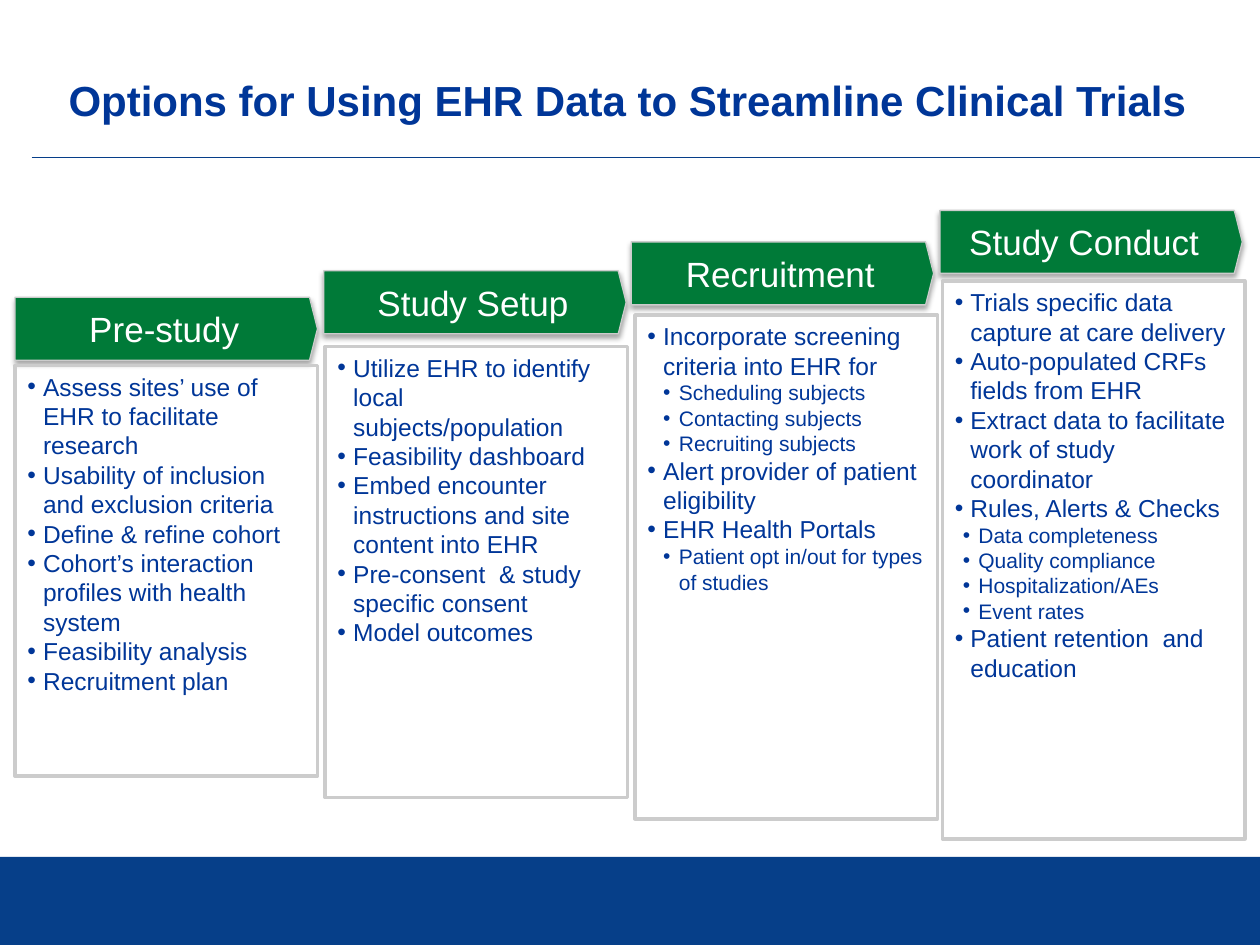
from lxml.etree import SubElement
from pptx import Presentation
from pptx.dml.color import RGBColor
from pptx.enum.shapes import MSO_CONNECTOR, MSO_SHAPE
from pptx.enum.text import MSO_ANCHOR, PP_ALIGN
from pptx.oxml.ns import qn
from pptx.util import Pt

TITLE = "Options for Using EHR Data to Streamline Clinical Trials"

# Each stage: name, header (left, top), box (left, top, height),
# indents by level, bullet hang, items as (level, text)
STAGES = [
    ("Pre-study", (8.64, 169.92), (8.64, 208.8, 234.72), (8.9, 17.8), 8.9, [
        (0, "Assess sites’ use of EHR to facilitate research"),
        (0, "Usability of inclusion and exclusion criteria"),
        (0, "Define & refine cohort"),
        (0, "Cohort’s interaction profiles with health system"),
        (0, "Feasibility analysis"),
        (0, "Recruitment plan"),
    ]),
    ("Study Setup", (185.04, 154.8), (185.76, 198, 257.76), (9, 18), 9, [
        (0, "Utilize EHR to identify local subjects/population"),
        (0, "Feasibility dashboard"),
        (0, "Embed encounter instructions and site content into EHR"),
        (0, "Pre-consent  & study specific consent"),
        (0, "Model outcomes"),
    ]),
    ("Recruitment", (360.72, 138.24), (362.88, 180, 288), (9, 18), 9, [
        (0, "Incorporate screening criteria into EHR for"),
        (1, "Scheduling subjects"),
        (1, "Contacting subjects"),
        (1, "Recruiting subjects"),
        (0, "Alert provider of patient eligibility"),
        (0, "EHR Health Portals"),
        (1, "Patient opt in/out for types of studies"),
    ]),
    ("Study Conduct ", (537.12, 120.24), (538.56, 160.56, 318.96), (8.9, 13.5), 8.9, [
        (0, "Trials specific data capture at care delivery"),
        (0, "Auto-populated CRFs fields from EHR"),
        (0, "Extract data to facilitate work of study coordinator"),
        (0, "Rules, Alerts & Checks"),
        (1, "Data completeness"),
        (1, "Quality compliance"),
        (1, "Hospitalization/AEs"),
        (1, "Event rates"),
        (0, "Patient retention  and education"),
    ]),
]
WIDE, HIGH = 172.8, 36


class Theme:
    font = "Arial"
    ink = RGBColor(0x00, 0x36, 0x98)
    band = RGBColor(0x06, 0x3F, 0x89)
    rule = RGBColor(0x06, 0x3E, 0x89)
    green = RGBColor(0x00, 0x7A, 0x38)
    edge = RGBColor(0xCC, 0xCC, 0xCC)
    white = RGBColor(0xFF, 0xFF, 0xFF)
    title, head, items = 24, 20, (14, 12)


def style(para, size, color, bold=False):
    font = para.font
    font.name, font.size, font.bold = Theme.font, Pt(size), bold
    font.color.rgb = color


def add_shape(slide, kind, left, top, width, height, fill=None, line=0):
    shape = slide.shapes.add_shape(kind, Pt(left), Pt(top), Pt(width), Pt(height))
    shape.shadow.inherit = False
    if fill is None:
        shape.fill.background()
    else:
        shape.fill.solid()
        shape.fill.fore_color.rgb = fill
    if line:
        shape.line.color.rgb = Theme.edge
        shape.line.width = Pt(line)
    else:
        shape.line.fill.background()
    shape.text_frame.word_wrap = True
    return shape


def add_shadow(shape):
    effects = shape._element.spPr.find(qn("a:effectLst"))
    outer = SubElement(effects, qn("a:outerShdw"), blurRad=str(Pt(3.1)),
                       dist=str(Pt(1.8)), dir="5400000", rotWithShape="0")
    color = SubElement(outer, qn("a:srgbClr"), val="000000")
    SubElement(color, qn("a:alpha"), val="35000")


def add_header(slide, name, left, top):
    arrow = add_shape(slide, MSO_SHAPE.PENTAGON, left, top, WIDE, HIGH,
                      Theme.green, 0.75)
    arrow.adjustments[0] = 0.126
    add_shadow(arrow)
    arrow.text_frame.vertical_anchor = MSO_ANCHOR.MIDDLE
    para = arrow.text_frame.paragraphs[0]
    para.text = name
    para.alignment = PP_ALIGN.CENTER
    style(para, Theme.head, Theme.white)


def add_list(slide, left, top, height, indents, hang, items):
    box = add_shape(slide, MSO_SHAPE.RECTANGLE, left, top, WIDE, height, line=2)
    frame = box.text_frame
    frame.vertical_anchor = MSO_ANCHOR.TOP
    for n, (level, text) in enumerate(items):
        para = frame.add_paragraph() if n else frame.paragraphs[0]
        para.text = text
        para.level = level
        para.alignment = PP_ALIGN.LEFT
        props = para._p.get_or_add_pPr()
        props.set("marL", str(Pt(indents[level])))
        props.set("indent", str(Pt(-hang)))
        SubElement(props, qn("a:buFont"), typeface=Theme.font)
        SubElement(props, qn("a:buChar"), char="•")
        style(para, Theme.items[level], Theme.ink)


def add_title(slide):
    box = slide.shapes.add_textbox(Pt(16.56), Pt(12.24), Pt(684), Pt(59.76))
    frame = box.text_frame
    frame.word_wrap = True
    frame.vertical_anchor = MSO_ANCHOR.BOTTOM
    frame.margin_left = frame.margin_right = Pt(0)
    frame.margin_top = frame.margin_bottom = Pt(0)
    para = frame.paragraphs[0]
    para.text = TITLE
    para.alignment = PP_ALIGN.CENTER
    para.line_spacing = 0.9
    style(para, Theme.title, Theme.ink, True)


def main():
    deck = Presentation()
    deck.slide_width, deck.slide_height = Pt(720), Pt(540)
    slide = deck.slides.add_slide(deck.slide_layouts[6])

    rule = slide.shapes.add_connector(MSO_CONNECTOR.STRAIGHT,
                                      Pt(18), Pt(90), Pt(720), Pt(90))
    rule.line.color.rgb = Theme.rule
    rule.line.width = Pt(0.75)
    SubElement(rule._element.spPr, qn("a:effectLst"))
    add_shape(slide, MSO_SHAPE.RECTANGLE, 0, 489.6, 720, 50.4, Theme.band)
    add_title(slide)

    for name, head, box, indents, hang, items in STAGES:
        add_header(slide, name, *head)
        add_list(slide, *box, indents, hang, items)
    deck.save("out.pptx")


if __name__ == "__main__":
    main()
